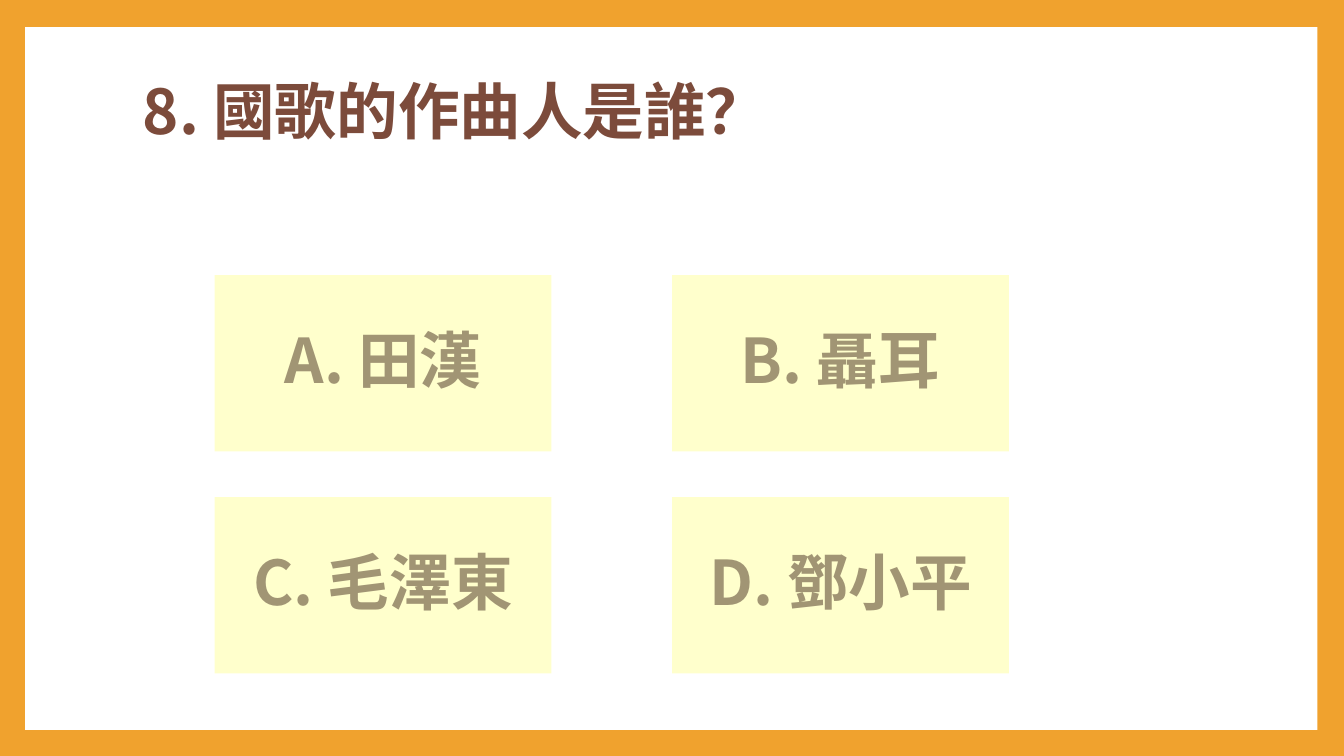
from dataclasses import dataclass

from lxml.etree import SubElement
from pptx import Presentation
from pptx.dml.color import RGBColor
from pptx.enum.shapes import MSO_SHAPE
from pptx.enum.text import MSO_ANCHOR, PP_ALIGN
from pptx.oxml.ns import qn
from pptx.util import Pt


@dataclass(frozen=True)
class Theme:
    """Colours, typeface and type size of the quiz."""
    frame: str = "F0A22E"
    panel: str = "FFFFFF"
    card: str = "FFFFCC"
    question: str = "7C4B3B"
    answer: str = "A19574"
    font: str = "Noto Sans CJK SC"
    size: float = 44


THEME = Theme()
QUESTION = "8. 國歌的作曲人是誰？"
ANSWERS = ["A. 田漢", "B. 聶耳", "C. 毛澤東", "D. 鄧小平"]


def add_block(slide, box, color):
    """Draw a plain filled rectangle in the box."""
    block = slide.shapes.add_shape(MSO_SHAPE.RECTANGLE, *map(Pt, box))
    block.shadow.inherit = False
    block.fill.solid()
    block.fill.fore_color.rgb = RGBColor.from_string(color)
    block.line.fill.background()
    return block


def write(frame, wording, color, align, space_before=0):
    """Write one bold line, centred vertically in the text frame."""
    frame.word_wrap = True
    frame.vertical_anchor = MSO_ANCHOR.MIDDLE
    line = frame.paragraphs[0]
    line.alignment = align
    line.line_spacing = 0.9
    line.space_before = Pt(space_before)
    run = line.add_run()
    run.text = wording
    run.font.name = THEME.font
    run.font.size = Pt(THEME.size)
    run.font.bold = True
    run.font.color.rgb = RGBColor.from_string(color)
    SubElement(run.font._element, qn("a:ea"), typeface=THEME.font)


def add_question(slide, box):
    """Place the question in the box."""
    question = slide.shapes.add_textbox(*map(Pt, box))
    write(question.text_frame, QUESTION, THEME.question, PP_ALIGN.LEFT)


def add_answers(slide, box, columns=2, card_width=240.5, card_height=126):
    """Spread the answer cards over a grid that fills the box."""
    left, top, width, height = box
    rows = len(ANSWERS) // columns
    step_x = (width - card_width) / (columns - 1)
    step_y = (height - card_height) / (rows - 1)
    for index, answer in enumerate(ANSWERS):
        row, column = divmod(index, columns)
        card_box = (left + column * step_x, top + row * step_y,
                    card_width, card_height)
        card = add_block(slide, card_box, THEME.card)
        write(card.text_frame, answer, THEME.answer, PP_ALIGN.CENTER, 14)


def add_quiz_slide(deck):
    """Build the framed question slide."""
    slide = deck.slides.add_slide(deck.slide_layouts[6])
    slide.background.fill.solid()
    slide.background.fill.fore_color.rgb = RGBColor.from_string(THEME.frame)
    add_block(slide, (18, 19.4, 923, 502), THEME.panel)
    add_question(slide, (95, 22.3, 784, 118.8))
    add_answers(slide, (153.4, 196.5, 567.3, 284.5))


def main():
    """Create and save the deck."""
    deck = Presentation()
    deck.slide_width, deck.slide_height = Pt(960), Pt(540)
    add_quiz_slide(deck)
    deck.save("out.pptx")


if __name__ == "__main__":
    main()
